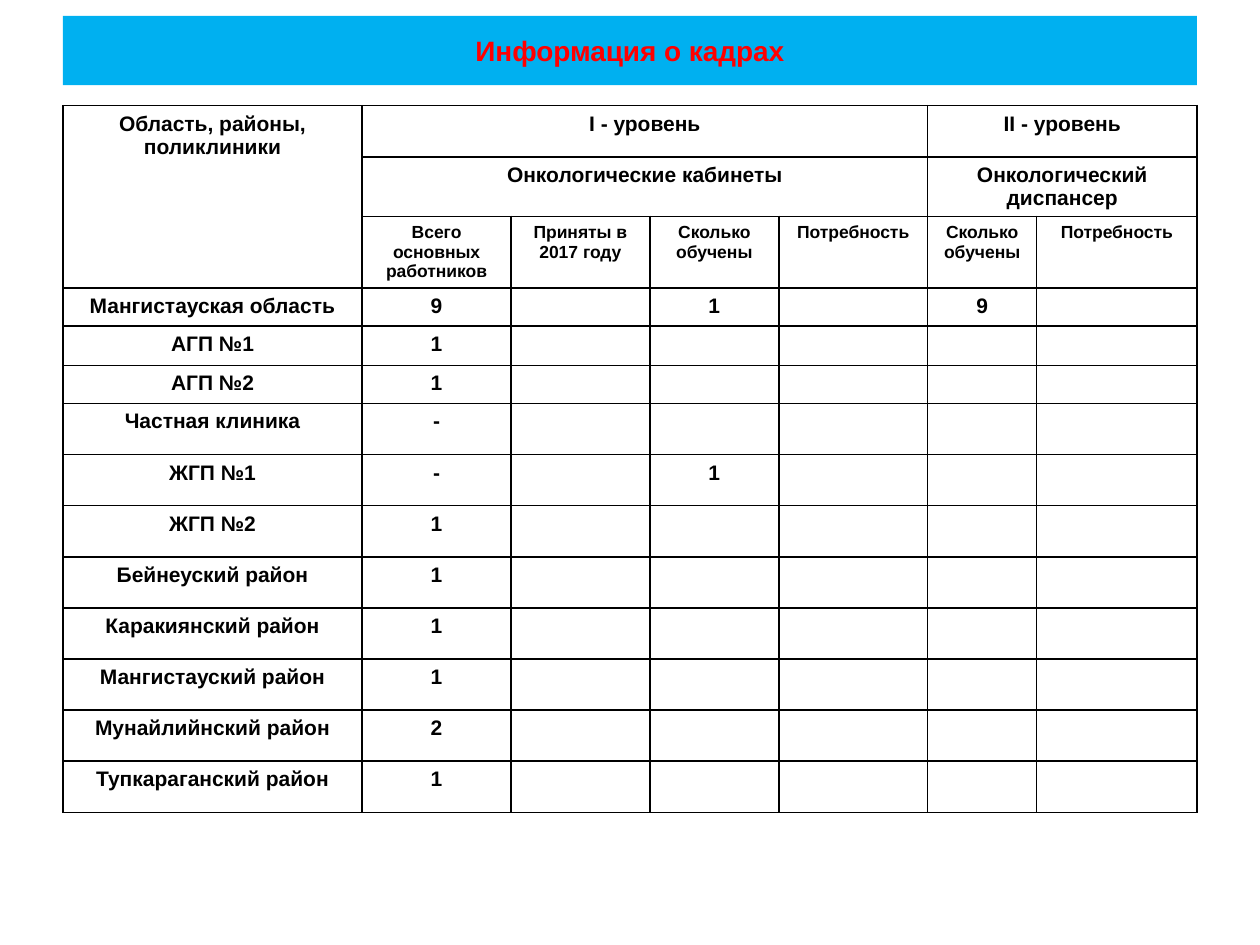
from lxml.etree import SubElement
from pptx import Presentation
from pptx.dml.color import RGBColor
from pptx.enum.shapes import MSO_SHAPE
from pptx.enum.text import MSO_ANCHOR, PP_ALIGN
from pptx.oxml.ns import qn
from pptx.util import Cm, Pt

COLORS = {"banner": "00B0F0", "title": "FF0000", "ink": "000000", "paper": "FFFFFF"}
COLS = [6.03, 3, 2.8, 2.6, 3, 2.2, 3.23]
HEIGHTS = [1.03, 1.2, 1.44, 0.73, 0.79, 0.74] + [1.03] * 8
ROWS = [
    ["Область, районы, поликлиники", "I - уровень", "", "", "", "II - уровень", ""],
    ["", "Онкологические кабинеты", "", "", "", "Онкологический диспансер", ""],
    ["", "Всего основных работников", "Приняты в 2017 году", "Сколько обучены",
     "Потребность", "Сколько обучены", "Потребность"],
    ["Мангистауская область", "9", "", "1", "", "9", ""],
    ["АГП №1", "1"],
    ["АГП №2", "1"],
    ["Частная клиника", "-"],
    ["ЖГП №1", "-", "", "1"],
    ["ЖГП №2", "1"],
    ["Бейнеуский район", "1"],
    ["Каракиянский район", "1"],
    ["Мангистауский район", "1"],
    ["Мунайлийнский район", "2"],
    ["Тупкараганский район", "1"],
]
MERGES = [(0, 0, 2, 0), (0, 1, 0, 4), (0, 5, 0, 6), (1, 1, 1, 4), (1, 5, 1, 6)]


def add_text(p, text, size, color):
    p.alignment = PP_ALIGN.CENTER
    if not text:
        SubElement(p._p, qn("a:endParaRPr"), sz=str(size * 100), b="1")
        return
    r = p.add_run()
    r.text = text
    r.font.name = "Arial"
    r.font.size = Pt(size)
    r.font.bold = True
    r.font.color.rgb = RGBColor.from_string(COLORS[color])


def set_cell(cell):
    tcPr = cell._tc.get_or_add_tcPr()
    for side in ("a:lnL", "a:lnR", "a:lnT", "a:lnB"):
        ln = SubElement(tcPr, qn(side), w=str(Pt(1)))
        fill = SubElement(ln, qn("a:solidFill"))
        SubElement(fill, qn("a:srgbClr"), val=COLORS["ink"])
    cell.fill.solid()
    cell.fill.fore_color.rgb = RGBColor.from_string(COLORS["paper"])


prs = Presentation()
prs.slide_width, prs.slide_height = Cm(25.4), Cm(19.05)
s = prs.slides.add_slide(prs.slide_layouts[6])

sp = s.shapes.add_shape(MSO_SHAPE.RECTANGLE, Cm(1.27), Cm(0.32), Cm(22.86), Cm(1.4))
sp.shadow.inherit = False
sp.fill.solid()
sp.fill.fore_color.rgb = RGBColor.from_string(COLORS["banner"])
sp.line.fill.background()
tf = sp.text_frame
tf.word_wrap = True
tf.vertical_anchor = MSO_ANCHOR.MIDDLE
add_text(tf.paragraphs[0], "Информация о кадрах", 16, "title")

gf = s.shapes.add_table(len(ROWS), len(COLS), Cm(1.27), Cm(2.13), Cm(sum(COLS)), Cm(sum(HEIGHTS)))
tbl = gf.table
for col, width in zip(tbl.columns, COLS):
    col.width = Cm(width)
for i, (row, height) in enumerate(zip(ROWS, HEIGHTS)):
    tbl.rows[i].height = Cm(height)
    size = 10 if i == 2 else 12
    for j in range(len(COLS)):
        cell = tbl.cell(i, j)
        set_cell(cell)
        add_text(cell.text_frame.paragraphs[0], row[j] if j < len(row) else "", size, "ink")
for top, left, bottom, right in MERGES:
    tbl.cell(top, left).merge(tbl.cell(bottom, right))

prs.save("out.pptx")
